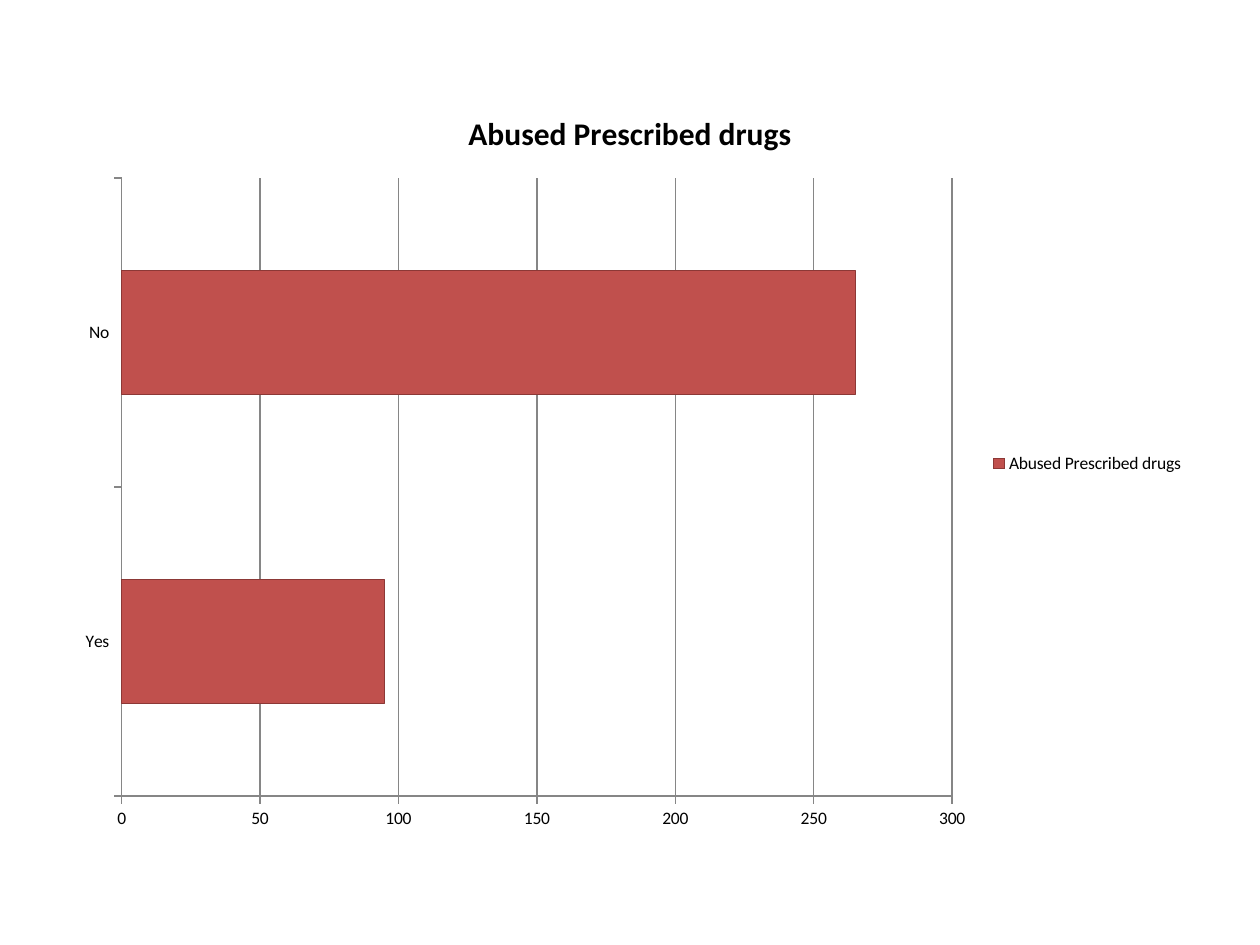
from pptx import Presentation
from pptx.chart.data import CategoryChartData
from pptx.dml.color import RGBColor
from pptx.enum.chart import XL_CHART_TYPE as ChartType
from pptx.enum.chart import XL_LEGEND_POSITION as LegendPosition
from pptx.enum.chart import XL_TICK_MARK as TickMark
from pptx.util import Pt

BLACK = RGBColor(0x00, 0x00, 0x00)
GRAY = RGBColor(0x86, 0x86, 0x86)
RED = RGBColor(0xC0, 0x50, 0x4D)
DARK_RED = RGBColor(0x8C, 0x38, 0x36)
FONT = "Calibri"
TITLE = "Abused Prescribed drugs"
ANSWERS = {"Yes": 95, "No": 265}


def style_font(font, size, bold=False):
    font.name = FONT
    font.size = Pt(size)
    font.bold = bold
    font.color.rgb = BLACK


def style_line(line, color):
    line.color.rgb = color
    line.width = Pt(0.75)


def style_axis(axis, gridlines):
    axis.major_tick_mark = TickMark.OUTSIDE
    axis.minor_tick_mark = TickMark.NONE
    axis.has_major_gridlines = gridlines
    style_line(axis.format.line, GRAY)
    if gridlines:
        style_line(axis.major_gridlines.format.line, GRAY)


def add_title(chart):
    chart.has_title = True
    chart.chart_title.include_in_layout = False
    frame = chart.chart_title.text_frame
    frame.text = TITLE
    style_font(frame.paragraphs[0].runs[0].font, 18, bold=True)


def add_legend(chart):
    chart.has_legend = True
    chart.legend.position = LegendPosition.RIGHT
    chart.legend.include_in_layout = False


def add_answer_chart(page):
    data = CategoryChartData()
    data.categories = list(ANSWERS)
    data.add_series(TITLE, list(ANSWERS.values()))
    frame = page.shapes.add_chart(
        ChartType.BAR_CLUSTERED, Pt(36), Pt(48), Pt(648), Pt(434), data)
    chart = frame.chart
    style_font(chart.font, 10)
    add_title(chart)
    add_legend(chart)
    style_axis(chart.category_axis, gridlines=False)
    style_axis(chart.value_axis, gridlines=True)
    chart.value_axis.minimum_scale = 0
    chart.value_axis.maximum_scale = 300
    chart.value_axis.major_unit = 50
    plot = chart.plots[0]
    plot.gap_width = 150
    plot.vary_by_categories = False
    bars = plot.series[0].format
    bars.fill.solid()
    bars.fill.fore_color.rgb = RED
    style_line(bars.line, DARK_RED)


def main():
    deck = Presentation()
    deck.slide_width = Pt(720)
    deck.slide_height = Pt(540)
    page = deck.slides.add_slide(deck.slide_layouts.get_by_name("Blank"))
    add_answer_chart(page)
    deck.save("out.pptx")


main()
